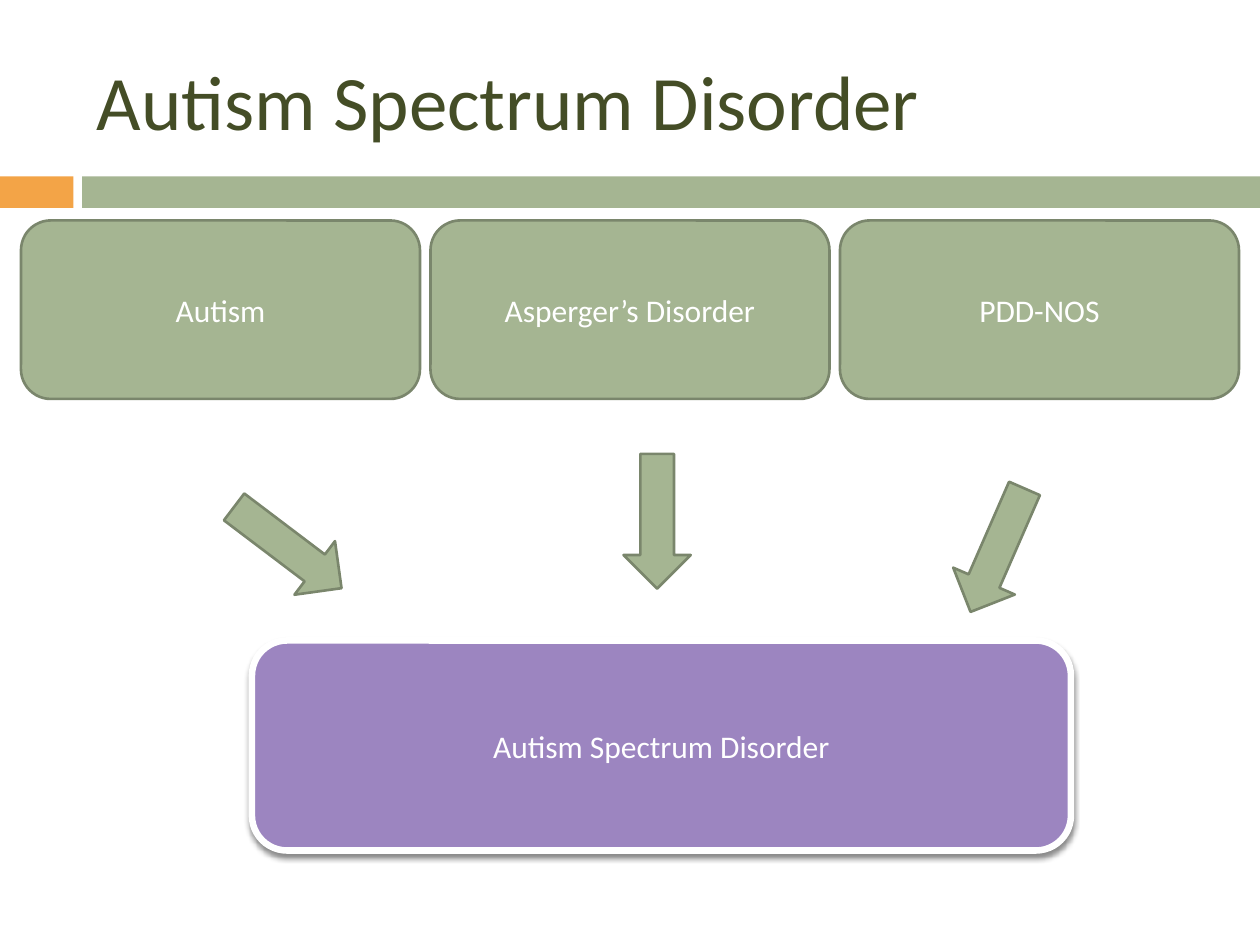
from lxml import etree
from pptx import Presentation
from pptx.dml.color import RGBColor
from pptx.enum.shapes import MSO_SHAPE as Shape
from pptx.enum.text import MSO_ANCHOR as Anchor, PP_ALIGN as Align
from pptx.oxml.ns import qn
from pptx.util import Pt

COLORS = {
    "green": "A5B592", "outline": "7A866C", "orange": "F3A447",
    "purple": "9C85C0", "white": "FFFFFF", "title": "444D26", "shadow": "000000",
}
FONT = "Calibri"


def rgb(name):
    return RGBColor.from_string(COLORS[name])


def add_block(slide, preset, box, fill, line=None, weight=1.5):
    block = slide.shapes.add_shape(preset, *map(Pt, box))
    block.shadow.inherit = False
    block.fill.solid()
    block.fill.fore_color.rgb = rgb(fill)
    if line:
        block.line.color.rgb = rgb(line)
        block.line.width = Pt(weight)
    else:
        block.line.fill.background()
    return block


def format_text(frame, text, size, color, align):
    frame.text = text
    frame.word_wrap = True
    frame.vertical_anchor = Anchor.MIDDLE
    paragraph = frame.paragraphs[0]
    paragraph.alignment = align
    paragraph.font.name = FONT
    paragraph.font.size = Pt(size)
    paragraph.font.color.rgb = rgb(color)


def add_card(slide, text, box, fill, line, weight):
    card = add_block(slide, Shape.ROUNDED_RECTANGLE, box, fill, line, weight)
    format_text(card.text_frame, text, 18, "white", Align.CENTER)
    return card


def add_drop_shadow(shape, blur, distance, opacity):
    effects = shape._element.spPr.find(qn("a:effectLst"))
    shadow = etree.SubElement(
        effects, qn("a:outerShdw"), blurRad=str(Pt(blur)), dist=str(Pt(distance)),
        dir="5400000", rotWithShape="0")
    color = etree.SubElement(shadow, qn("a:srgbClr"), val=COLORS["shadow"])
    etree.SubElement(color, qn("a:alpha"), val=str(opacity * 1000))


def place_title(slide, text, box):
    title = slide.shapes.title
    title.left, title.top, title.width, title.height = map(Pt, box)
    format_text(title.text_frame, text, 44, "title", Align.LEFT)


def add_band(slide, left, top, width, height):
    accent, gap = 42, 5
    add_block(slide, Shape.RECTANGLE, (left, top, accent, height), "orange")
    offset = accent + gap
    add_block(slide, Shape.RECTANGLE, (left + offset, top, width - offset, height), "green")


def add_diagnoses(slide, names, left, top, width, height):
    gap = 6
    card_width = (width - gap * (len(names) - 1)) / len(names)
    for index, name in enumerate(names):
        card_left = left + index * (card_width + gap)
        add_card(slide, name, (card_left, top, card_width, height), "green", "outline", 1.5)


def add_arrows(slide, left, top):
    # Offsets from the region's corner, then clockwise turn
    for dx, dy, angle in ((0, 15, 37.1), (211, 0, 90), (405.5, 16.5, 113.6)):
        arrow = add_block(slide, Shape.RIGHT_ARROW, (left + dx, top + dy, 77, 38.4),
                          "green", "outline")
        arrow.rotation = angle


def add_spectrum(slide, text, box):
    card = add_card(slide, text, box, "purple", "white", 3.75)
    add_drop_shadow(card, blur=3, distance=2.4, opacity=45)


def main():
    prs = Presentation()
    prs.slide_width, prs.slide_height = Pt(720), Pt(540)
    slide = prs.slides.add_slide(prs.slide_layouts[5])

    # Heading
    place_title(slide, "Autism Spectrum Disorder", (48, 18, 642, 78))
    add_band(slide, 0, 100.8, 720, 18)

    # Separate diagnoses merging into one
    add_diagnoses(slide, ("Autism", "Asperger’s Disorder", "PDD-NOS"), 12, 126, 696, 102)
    add_arrows(slide, 126, 278.7)
    add_spectrum(slide, "Autism Spectrum Disorder", (144, 366, 468, 120))

    prs.save("out.pptx")


if __name__ == "__main__":
    main()
